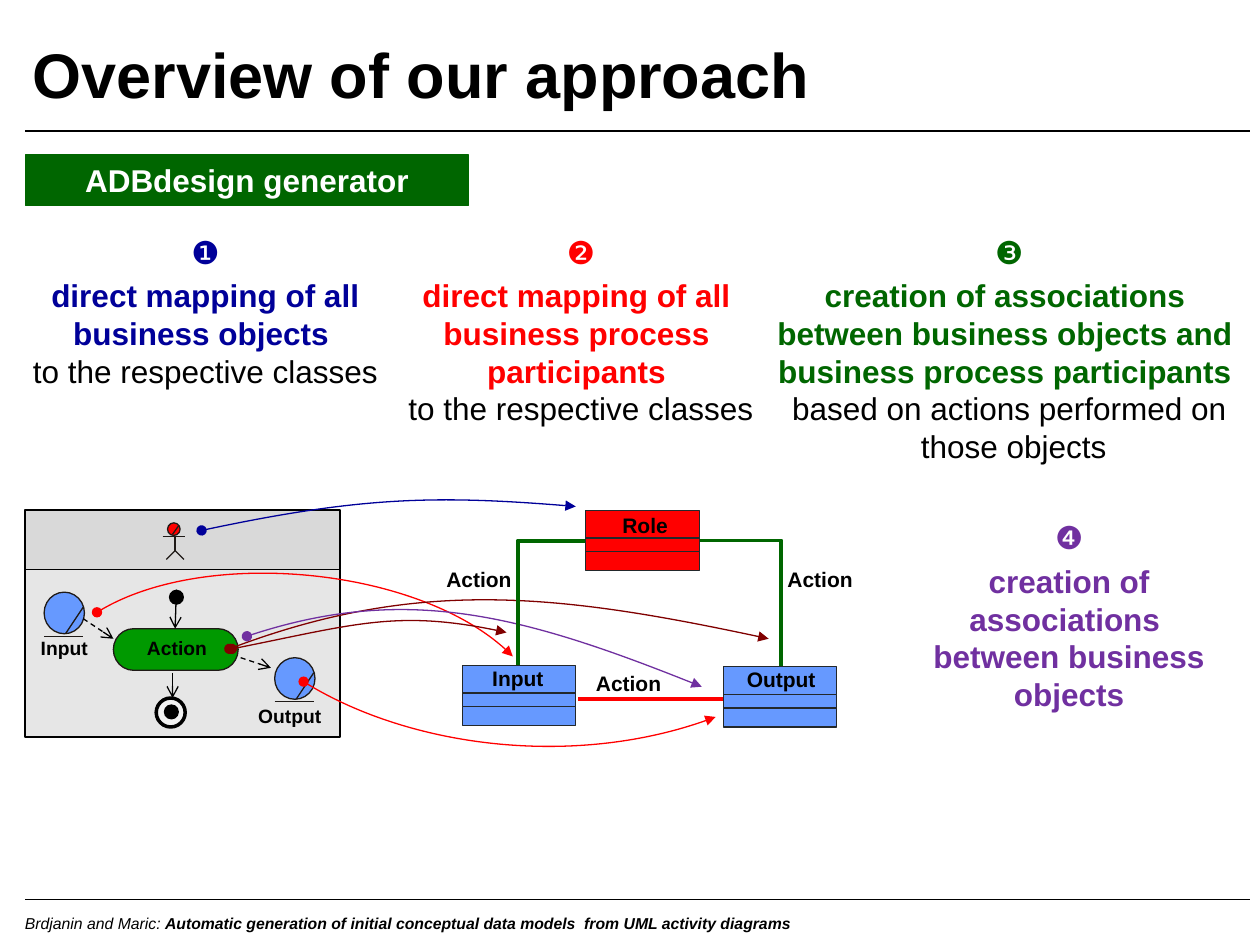
from lxml import etree
from pptx import Presentation
from pptx.dml.color import RGBColor
from pptx.enum.dml import MSO_LINE
from pptx.enum.shapes import MSO_CONNECTOR, MSO_SHAPE
from pptx.enum.text import MSO_ANCHOR, PP_ALIGN
from pptx.oxml.ns import qn
from pptx.util import Inches, Pt

RECT, OVAL, PILL = MSO_SHAPE.RECTANGLE, MSO_SHAPE.OVAL, MSO_SHAPE.FLOWCHART_TERMINATOR
STRAIGHT, ELBOW = MSO_CONNECTOR.STRAIGHT, MSO_CONNECTOR.ELBOW
LEFT, CENTER, RIGHT = PP_ALIGN.LEFT, PP_ALIGN.CENTER, PP_ALIGN.RIGHT
TOP, MIDDLE, BOTTOM = MSO_ANCHOR.TOP, MSO_ANCHOR.MIDDLE, MSO_ANCHOR.BOTTOM

THEME = {
    "font": "Arial",
    "black": "000000", "white": "FFFFFF", "ink": "1F1A17", "border": "23282B",
    "navy": "000099", "red": "FF0000", "green": "006600", "violet": "7030A0",
    "maroon": "800000", "blue": "6699FF", "action": "009900",
    "lane": "E6E6E6", "lane_head": "D9D9D9", "final": "F2F2F2",
    "title": 36, "body": 18, "class": 12, "node": 11, "footer": 9,
}
COLUMNS, ROWS = 10, 7.5
PADDED, TIGHT = (0.1, 0.05), (0, 0)

TITLE = "Overview of our approach"
BANNER = "ADBdesign generator"
AUTHORS = "Brdjanin and Maric: "
PAPER = "Automatic generation of initial conceptual data models  from UML activity diagrams"
RULES = [1.04, 7.14]

STEPS = [
    ((0.06, 1.8, 3.14, 1.72), "navy", "❶", 3,
     ["direct mapping of all", "business objects "], ["to the respective classes"]),
    ((3.05, 1.8, 3.12, 1.81), "red", "❷", 3,
     ["direct mapping of all ", "business process ", "participants "],
     ["to the respective classes"]),
    ((6.02, 1.8, 3.98, 1.95), "green", "❸", 3,
     ["creation of associations ", "between business objects and ",
      "business process participants "],
     ["based on actions performed on", " those objects"]),
    ((6.97, 4.06, 3.03, 1.89), "violet", "❹", 3.6,
     ["creation of associations ", "between business objects"], []),
]

LANES = [((0.2, 4.52, 2.5, 1.33), "lane"), ((0.2, 4.05, 2.5, 0.47), "lane_head")]
ENTITIES = [("Input", (0.35, 4.7), (0.12, 5)), ("Output", (2.18, 5.22), (1.91, 5.54))]
ACTOR_HEAD = (1.33, 4.15, 0.1, 0.1)
ACTOR_LIMBS = [
    (1.37, 4.24, 1.42, 4.17), (1.39, 4.25, 1.39, 4.37), (1.29, 4.26, 1.47, 4.26),
    (1.39, 4.37, 1.32, 4.44), (1.39, 4.37, 1.46, 4.44),
]
OBJECT_FLOWS = [(0.66, 4.91, 0.9, 5.07), (1.91, 5.22, 2.15, 5.3)]
CONTROL_FLOWS = [(1.4, 4.68, 1.39, 4.99), (1.37, 5.34, 1.37, 5.54)]
STATES = [
    ((1.34, 4.68, 0.12, 0.12), "black", None, 0),
    ((1.24, 5.54, 0.23, 0.23), "final", "black", 2),
    ((1.3, 5.59, 0.12, 0.12), "black", None, 0),
]

MAPPINGS = [
    ("red", [(2.41, 5.41), (3.24, 5.93), (4.61, 6.1), (5.68, 5.69)]),
    ("red", [(0.77, 4.86), (1.6, 4.34), (3.39, 4.51), (4.07, 5.21)]),
    ("navy", [(1.6, 4.21), (2.86, 3.94), (3.5, 3.93), (4.57, 4.02)]),
    ("maroon", [(1.84, 5.15), (2.8, 4.96), (3.17, 4.83), (4.02, 5.02)]),
    ("maroon", [(1.82, 5.15), (3.29, 4.59), (4.44, 4.71), (6.1, 5.07)]),
    ("violet", [(1.96, 5.05), (3.21, 4.63), (4.18, 4.89), (5.57, 5.45)]),
]
ASSOCIATIONS = [
    (ELBOW, (4.65, 4.29, 4.11, 5.28), "green", (3.32, 4.5), RIGHT),
    (ELBOW, (5.55, 4.29, 6.2, 5.29), "green", (6.25, 4.5), LEFT),
    (STRAIGHT, (5.75, 5.55, 4.59, 5.55), "red", (4.73, 5.32), LEFT),
]
CLASSES = [
    ("Output", (5.74, 5.29), "blue", (5.83, 5.29, 0.74, 0.2)),
    ("Input", (3.67, 5.28), "blue", (3.7, 5.28, 0.82, 0.2)),
    ("Role", (4.65, 4.05), "red", (4.75, 4.07, 0.74, 0.2)),
]

deck = Presentation()
deck.slide_width, deck.slide_height = Inches(COLUMNS), Inches(ROWS)
slide = deck.slides.add_slide(deck.slide_layouts[6])
canvas = slide.shapes


def color(key):
    return RGBColor.from_string(THEME[key])


def apply(target, formats):
    for name, value in formats.items():
        setattr(target, name, value)


def style_line(line, ink, width, ends=(), dash=None):
    line.color.rgb = color(ink)
    line.width = Pt(width)
    if dash:
        line.dash_style = dash
    for tag, kind in ends:
        etree.SubElement(line._get_or_add_ln(), qn(tag), type=kind)


def block(kind, place, fill, ink=None, width=0.75):
    shape = canvas.add_shape(kind, *map(Inches, place))
    shape.shadow.inherit = False
    shape.fill.solid()
    shape.fill.fore_color.rgb = color(fill)
    if ink:
        style_line(shape.line, ink, width)
    else:
        shape.line.fill.background()
    return shape


def connect(points, ink="ink", width=0.75, kind=STRAIGHT, **extras):
    link = canvas.add_connector(kind, *map(Inches, points))
    properties = link._element.spPr
    if kind == ELBOW:
        properties.find(qn("a:prstGeom")).set("prst", "bentConnector2")
    style_line(link.line, ink, width, **extras)
    etree.SubElement(properties, qn("a:effectLst"))


def curve(ink, points):
    scaled = [tuple(map(Inches, point)) for point in points]
    builder = canvas.build_freeform(*scaled[0])
    builder.add_line_segments(scaled[1:], close=False)
    shape = builder.convert_to_shape()
    shape.shadow.inherit = False
    shape.fill.background()
    style_line(shape.line, ink, 0.75, [("a:headEnd", "oval"), ("a:tailEnd", "triangle")])
    segments = list(shape._element.iter(qn("a:lnTo")))
    bezier = etree.SubElement(segments[0].getparent(), qn("a:cubicBezTo"))
    for segment in segments:
        bezier.append(segment[0])
        segment.getparent().remove(segment)


def write(shape, paragraphs, align=LEFT, anchor=TOP, inset=PADDED):
    frame = shape.text_frame
    side, edge = map(Inches, inset)
    apply(frame, {"word_wrap": True, "vertical_anchor": anchor, "margin_left": side,
                  "margin_right": side, "margin_top": edge, "margin_bottom": edge})
    for index, (space, runs) in enumerate(paragraphs):
        paragraph = frame.paragraphs[0] if index == 0 else frame.add_paragraph()
        apply(paragraph, {"alignment": align, "space_before": Pt(space)})
        for words, size, ink, bold, italic in runs:
            run = paragraph.add_run()
            run.text = words
            apply(run.font, {"name": THEME["font"], "size": Pt(THEME[size]),
                             "bold": bold, "italic": italic})
            run.font.color.rgb = color(ink)


def area(place):
    return canvas.add_textbox(*map(Inches, place))


def label(shape, words, size, ink="black", **layout):
    write(shape, [(0, [(words, size, ink, True, False)])], **layout)


for height in RULES:
    connect((0.2, height, 9.92, height), "black")
write(area((0.1, 7.2, 7.17, 0.25)), [(0, [
    (AUTHORS, "footer", "black", False, True), (PAPER, "footer", "black", True, True)])])
label(area((0.16, 0.23, 8.07, 0.7)), TITLE, "title", anchor=BOTTOM)
label(block(RECT, (0.2, 1.23, 3.52, 0.4), "green", "green"),
      BANNER, "body", "white", align=CENTER, anchor=MIDDLE)

for place, ink, number, gap, strong, plain in STEPS:
    lines = [(number, ink, False)]
    lines += [(words, ink, True) for words in strong]
    lines += [(words, "black", False) for words in plain]
    write(area(place), [
        (gap if index == 1 else 0, [(words, "body", shade, bold, False)])
        for index, (words, shade, bold) in enumerate(lines)], align=CENTER)

for place, fill in LANES:
    block(RECT, place, fill, "black", 1)
for name, (x, y), caption in ENTITIES:
    block(OVAL, (x, y, 0.32, 0.33), "blue", "ink")
    connect((x, y + 0.35, x + 0.31, y + 0.35))
    connect((x + 0.17, y + 0.33, x + 0.31, y + 0.12))
    label(area((*caption, 0.78, 0.29)), name, "node", align=CENTER)
block(OVAL, ACTOR_HEAD, "red", "ink")
for limb in ACTOR_LIMBS:
    connect(limb)
block(PILL, (0.9, 4.99, 0.99, 0.33), "action", "ink")
label(block(RECT, (1.08, 5.05, 0.65, 0.19), "action"),
      "Action", "node", align=CENTER, inset=TIGHT)
for flows, dash in [(OBJECT_FLOWS, MSO_LINE.DASH), (CONTROL_FLOWS, None)]:
    for flow in flows:
        connect(flow, "black", ends=[("a:tailEnd", "arrow")], dash=dash)
for state in STATES:
    block(OVAL, *state)

for mapping in MAPPINGS:
    curve(*mapping)
for kind, points, ink, caption, align in ASSOCIATIONS:
    connect(points, ink, 2.25, kind)
    label(area((*caption, 0.74, 0.2)), "Action", "class", align=align, inset=TIGHT)
for name, (x, y), fill, caption in CLASSES:
    block(RECT, (x, y, 0.9, 0.48), fill, "border")
    block(RECT, (x, y + 0.22, 0.9, 0.11), fill, "border")
    label(area(caption), name, "class", align=CENTER, inset=TIGHT)

deck.save("out.pptx")
